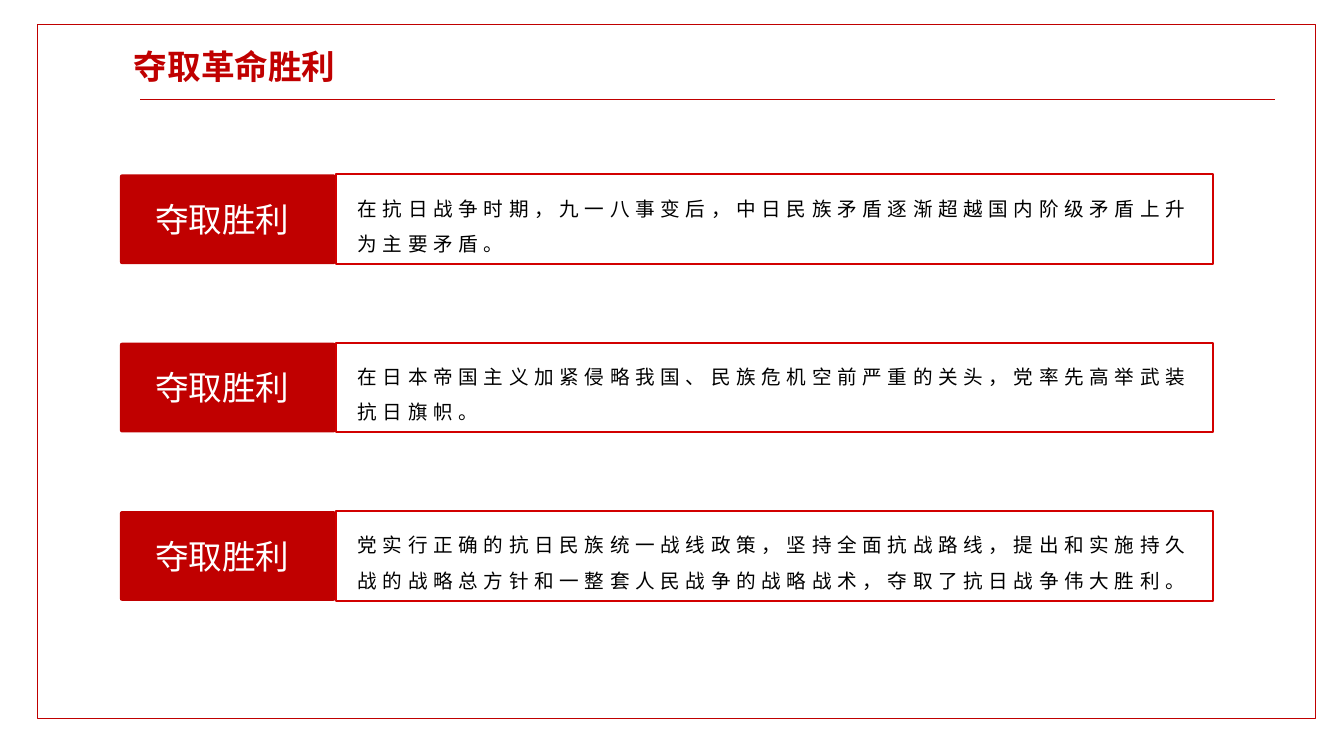
from pptx import Presentation
from pptx.dml.color import RGBColor
from pptx.enum.shapes import MSO_CONNECTOR, MSO_SHAPE
from pptx.enum.text import MSO_AUTO_SIZE, PP_ALIGN
from pptx.oxml.ns import qn
from pptx.util import Inches, Pt
from lxml.etree import SubElement

HUES = {"red": "C00000", "edge": "D20000", "white": "FFFFFF", "black": "000000"}
FONT = "Noto Sans CJK SC"
CELL = Inches(0.1)
LABEL = "夺取胜利"
FACTS = [
    "在抗日战争时期，九一八事变后，中日民族矛盾逐渐超越国内阶级矛盾上升为主要矛盾。",
    "在日本帝国主义加紧侵略我国、民族危机空前严重的关头，党率先高举武装抗日旗帜。",
    "党实行正确的抗日民族统一战线政策，坚持全面抗战路线，提出和实施持久战的战略总方针和一整套人民战争的战略战术，夺取了抗日战争伟大胜利。",
]


def cells(*sizes):
    return [round(size * CELL) for size in sizes]


def hue(name):
    return RGBColor.from_string(HUES[name])


class Page:
    def __init__(self, deck):
        self.slide = deck.slides.add_slide(deck.slide_layouts[6])
        self.home = self.slide.shapes

    def block(self, box, fill=None, edge=None, width=1, bend=None, home=None):
        kind = MSO_SHAPE.RECTANGLE if bend is None else MSO_SHAPE.ROUNDED_RECTANGLE
        shape = (home or self.home).add_shape(kind, *cells(*box))
        shape.shadow.inherit = False
        if bend is not None:
            shape.adjustments[0] = bend
        if fill:
            shape.fill.solid()
            shape.fill.fore_color.rgb = hue(fill)
        else:
            shape.fill.background()
        if edge:
            shape.line.color.rgb = hue(edge)
            shape.line.width = Pt(width)
        else:
            shape.line.fill.background()

    def rule(self, ends, color, width):
        line = self.home.add_connector(MSO_CONNECTOR.STRAIGHT, *cells(*ends))
        line.line.color.rgb = hue(color)
        line.line.width = Pt(width)
        SubElement(line._element.spPr, qn("a:effectLst"))

    def text(self, box, words, size, color, bold=False, align=None,
             lead=None, track=None, home=None):
        frame = (home or self.home).add_textbox(*cells(*box)).text_frame
        frame.word_wrap = True
        frame.auto_size = MSO_AUTO_SIZE.SHAPE_TO_FIT_TEXT
        frame.text = words
        para = frame.paragraphs[0]
        para.alignment = align
        para.line_spacing = lead
        run = para.runs[0]
        run.font.name = FONT
        run.font.size = Pt(size)
        run.font.bold = bold
        run.font.color.rgb = hue(color)
        props = run.font._element
        SubElement(props, qn("a:ea")).set("typeface", FONT)
        if track:
            props.set("spc", str(track * 100))

    def fact(self, top, words):
        home = self.home.add_group_shape().shapes
        self.block((11.9, top, 21.4, 8.9), "red", bend=0.024, home=home)
        self.block((33.3, top, 87, 8.9), edge="edge", width=1.5, home=home)
        self.text((14.4, top + 1.95, 16.5, 5), LABEL, 24, "white",
                  align=PP_ALIGN.JUSTIFY, home=home)
        self.text((34.5, top + 0.55, 86.5, 7.6), words, 14, "black",
                  lead=1.5, track=4, home=home)


def main():
    deck = Presentation()
    deck.slide_width, deck.slide_height = cells(133.33, 75)
    page = Page(deck)
    page.block((3.7, 2.4, 126.8, 68.9), "white", "red")
    page.rule((13.9, 9.9, 126.5, 9.9), "red", 0.5)
    for row, words in enumerate(FACTS):
        page.fact(17.3 + 16.7 * row, words)
    page.text((12.3, 4.1, 25.2, 5), "夺取革命胜利", 24, "red",
              bold=True, align=PP_ALIGN.JUSTIFY)
    deck.save("out.pptx")


if __name__ == "__main__":
    main()
